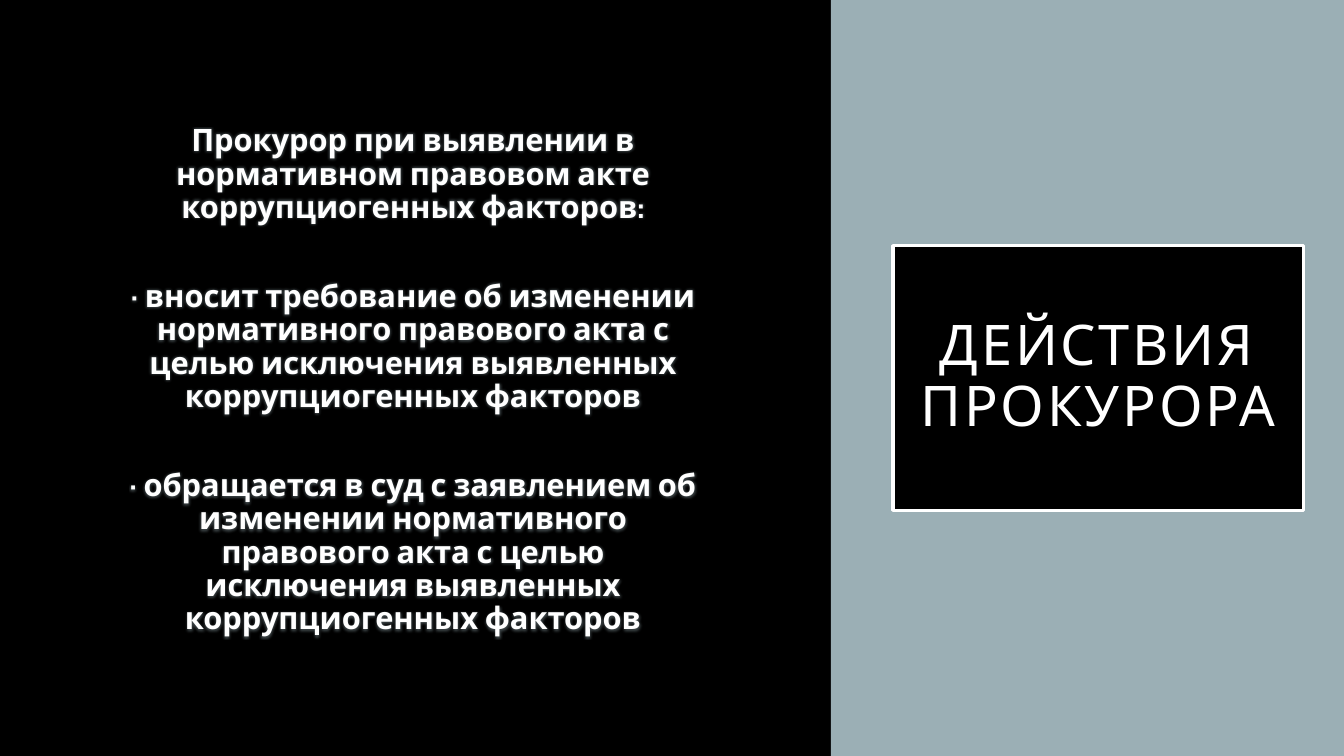
from lxml import etree
from pptx import Presentation
from pptx.dml.color import RGBColor
from pptx.enum.shapes import MSO_SHAPE
from pptx.enum.text import MSO_ANCHOR, MSO_AUTO_SIZE, PP_ALIGN
from pptx.oxml.ns import qn
from pptx.util import Pt

RECT = MSO_SHAPE.RECTANGLE
MIDDLE = MSO_ANCHOR.MIDDLE
NO_FIT = MSO_AUTO_SIZE.NONE
CENTER = PP_ALIGN.CENTER
COLORS = {"black": "000000", "white": "FFFFFF", "panel": "9BAFB5"}
FONT = "Cabin"
ACTIONS = [
    "Прокурор при выявлении в нормативном правовом акте коррупциогенных факторов:",
    "· вносит требование об изменении нормативного правового акта с целью исключения выявленных коррупциогенных факторов",
    "· обращается в суд с заявлением об изменении нормативного правового акта с целью исключения выявленных коррупциогенных факторов",
]


def style_box(sp, fill, line, width, inset):
    sp.fill.solid()
    sp.fill.fore_color.rgb = RGBColor.from_string(COLORS[fill])
    sp.line.color.rgb = RGBColor.from_string(COLORS[line])
    sp.line.width = Pt(width)
    tf = sp.text_frame
    tf.word_wrap = True
    tf.auto_size = NO_FIT
    tf.vertical_anchor = MIDDLE
    tf.margin_left = tf.margin_right = tf.margin_top = tf.margin_bottom = Pt(inset)
    return tf


def style_paragraph(p, size, bold):
    p.alignment = CENTER
    p.line_spacing = 0.9
    r = p.runs[0]
    r.font.size = Pt(size)
    r.font.bold = bold
    r.font.color.rgb = RGBColor.from_string(COLORS["white"])
    r.font.name = FONT
    return r.font._element if hasattr(r.font, "_element") else r._r.get_or_add_rPr()


prs = Presentation()
prs.slide_width = Pt(960)
prs.slide_height = Pt(540)
s = prs.slides.add_slide(prs.slide_layouts[5])
s.background.fill.solid()
s.background.fill.fore_color.rgb = RGBColor.from_string(COLORS["black"])

title = s.shapes.title
title.left, title.top, title.width, title.height = Pt(638), Pt(175.5), Pt(293), Pt(189)
tf = style_box(title, "black", "white", 2.5, 14.4)
tf.text = "ДЕЙСТВИЯ ПРОКУРОРА"
rpr = style_paragraph(tf.paragraphs[0], 40, False)
rpr.set("spc", "200")

panel = s.shapes.add_shape(RECT, Pt(593.5), Pt(0), Pt(366.5), Pt(540))
panel.shadow.inherit = False
panel.fill.solid()
panel.fill.fore_color.rgb = RGBColor.from_string(COLORS["panel"])
panel.line.fill.background()
title.element.addprevious(panel.element)

body = s.shapes.add_shape(RECT, Pt(72.5), Pt(76.5), Pt(445), Pt(391))
body.shadow.inherit = False
tf = style_box(body, "black", "black", 1, 12.2)
tf.text = "\n".join(ACTIONS)
for p in tf.paragraphs:
    rpr = style_paragraph(p, 22, True)
    effects = etree.Element(qn("a:effectLst"))
    glow = etree.SubElement(effects, qn("a:glow"), rad=str(Pt(5)))
    color = etree.SubElement(glow, qn("a:srgbClr"), val=COLORS["panel"])
    etree.SubElement(color, qn("a:alpha"), val="40000")
    rpr.find(qn("a:latin")).addprevious(effects)
for p in tf.paragraphs[:-1]:
    p.space_after = Pt(40)

prs.save("out.pptx")
